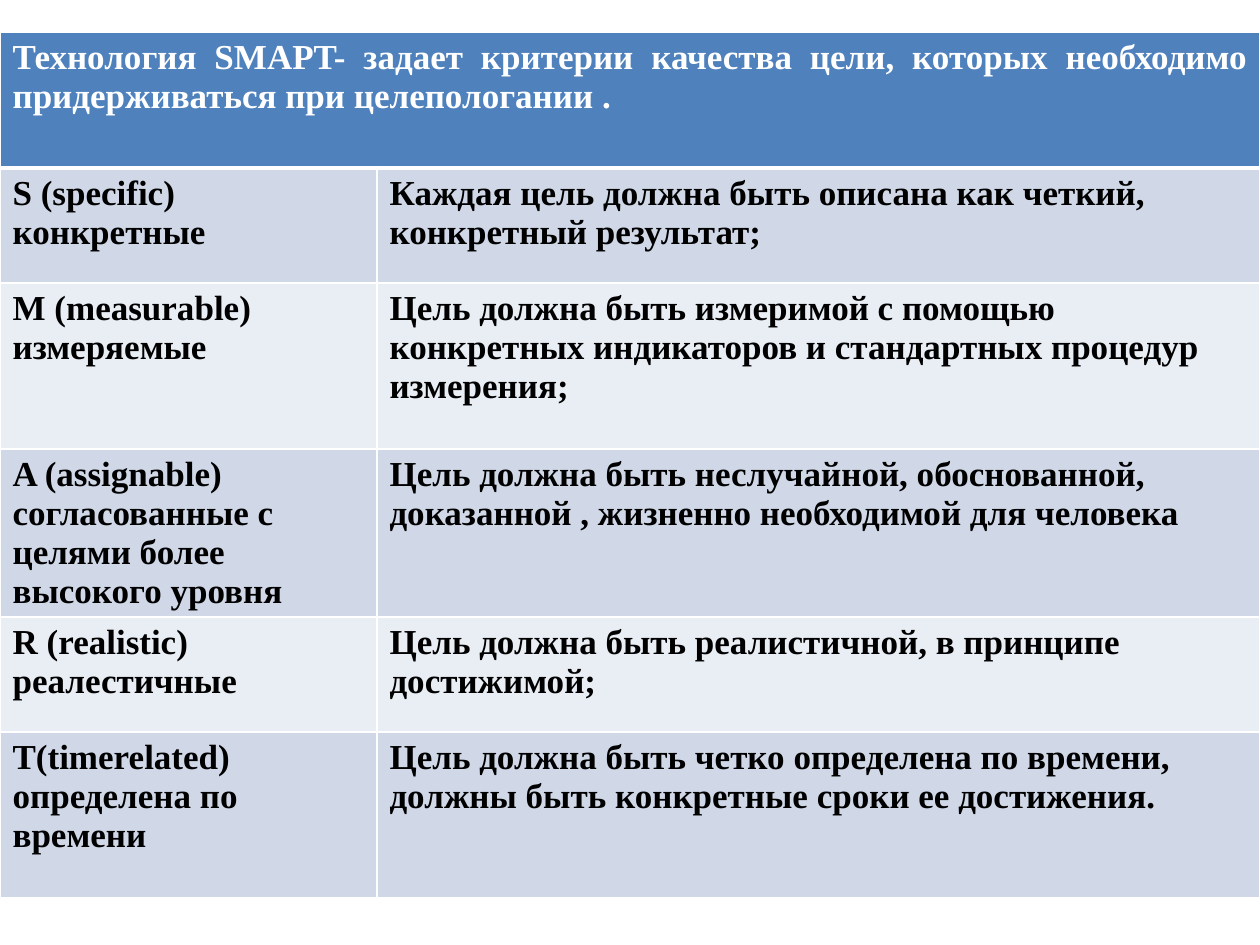
from dataclasses import dataclass

from lxml import etree
from pptx import Presentation
from pptx import util as u
from pptx.dml.color import RGBColor
from pptx.enum import text
from pptx.oxml import ns

PX_PER_INCH = 126
FONT = "Times New Roman"
WHITE, BLACK, BLUE = "FFFFFF", "000000", "4F81BD"
BANDS = ("D0D8E8", "E9EDF4")
COLUMN_WIDTHS = (377, 883)
HEADER_HEIGHT = 136
TABLE_TOP = 32
HEADER = (
    "Технология SMAPT- задает критерии качества цели, "
    "которых необходимо придерживаться при целепологании ."
)


@dataclass(frozen=True)
class Criterion:
    name: str
    meaning: str
    height: int


CRITERIA = (
    Criterion(
        "S (specific) конкретные",
        "Каждая цель должна быть описана как четкий, конкретный результат;",
        115,
    ),
    Criterion(
        "M (measurable) измеряемые",
        "Цель должна быть измеримой с помощью конкретных индикаторов "
        "и стандартных процедур измерения;",
        166,
    ),
    Criterion(
        "A (assignable) согласованные с целями более высокого уровня",
        "Цель должна быть неслучайной, обоснованной, доказанной , "
        "жизненно необходимой для человека",
        166,
    ),
    Criterion(
        "R (realistiс) реалестичные",
        "Цель должна быть реалистичной, в принципе достижимой;",
        115,
    ),
    Criterion(
        "T(timerelated) определена по времени",
        "Цель должна быть четко определена по времени, "
        "должны быть конкретные сроки ее достижения.",
        166,
    ),
)


def px(length: int) -> int:
    return round(length * u.Inches(1) / PX_PER_INCH)


def color(value: str) -> RGBColor:
    return RGBColor.from_string(value)


def set_borders(cell, top: int = 1, bottom: int = 1) -> None:
    properties = cell._tc.get_or_add_tcPr()
    for side, width in (("L", 1), ("R", 1), ("T", top), ("B", bottom)):
        line = etree.SubElement(properties, ns.qn(f"a:ln{side}"), w=str(u.Pt(width)))
        fill = etree.SubElement(line, ns.qn("a:solidFill"))
        etree.SubElement(fill, ns.qn("a:srgbClr"), val=WHITE)


def paint_cell(cell, fill: str, top: int = 1, bottom: int = 1) -> None:
    set_borders(cell, top, bottom)
    cell.fill.solid()
    cell.fill.fore_color.rgb = color(fill)


def write_cell(cell, wording: str, font_color: str) -> None:
    cell.text_frame.text = wording
    font = cell.text_frame.paragraphs[0].runs[0].font
    font.name = FONT
    font.size = u.Pt(20)
    font.bold = True
    font.color.rgb = color(font_color)


def add_criteria_table(slide) -> None:
    heights = [HEADER_HEIGHT, *(criterion.height for criterion in CRITERIA)]
    table = slide.shapes.add_table(
        len(heights), len(COLUMN_WIDTHS),
        0, px(TABLE_TOP), px(sum(COLUMN_WIDTHS)), px(sum(heights)),
    ).table
    for column, width in zip(table.columns, COLUMN_WIDTHS):
        column.width = px(width)
    for row, height in zip(table.rows, heights):
        row.height = px(height)

    header = table.cell(0, 0)
    header.merge(table.cell(0, 1))
    for cell in table.rows[0].cells:
        paint_cell(cell, BLUE, bottom=3)
    write_cell(header, HEADER, WHITE)
    header.text_frame.paragraphs[0].alignment = text.PP_ALIGN.JUSTIFY

    for index, criterion in enumerate(CRITERIA):
        cells = table.rows[index + 1].cells
        for cell, wording in zip(cells, (criterion.name, criterion.meaning)):
            paint_cell(cell, BANDS[index % 2], top=3 if index == 0 else 1)
            write_cell(cell, wording, BLACK)


def main() -> None:
    presentation = Presentation()
    presentation.slide_width = px(1260)
    presentation.slide_height = px(945)
    slide = presentation.slides.add_slide(presentation.slide_layouts[6])
    add_criteria_table(slide)
    presentation.save("out.pptx")


if __name__ == "__main__":
    main()
